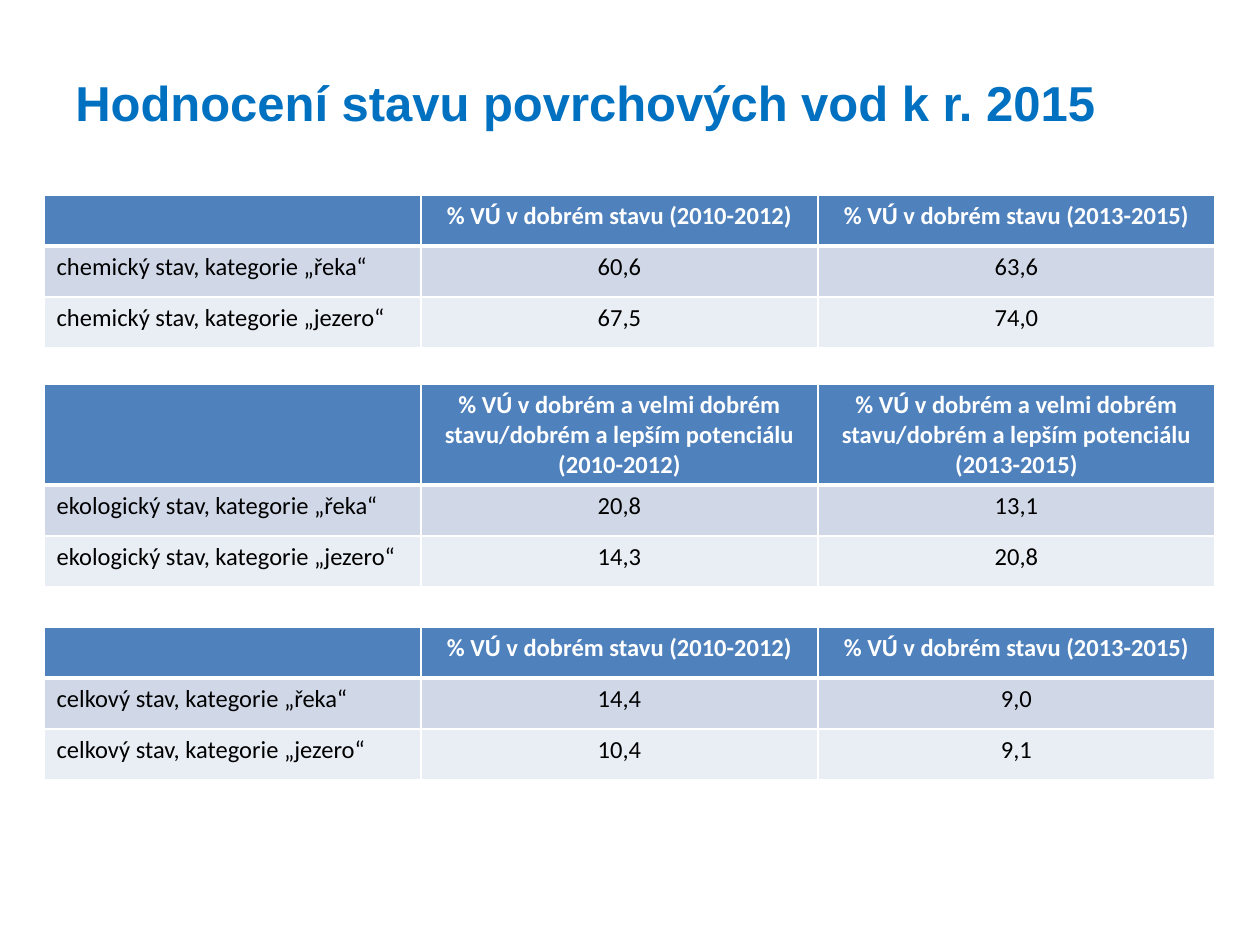
from lxml import etree
from pptx import Presentation
from pptx.dml.color import RGBColor
from pptx.enum.text import MSO_ANCHOR, PP_ALIGN
from pptx.oxml.ns import qn
from pptx.util import Emu, Pt

LEFT, CENTER = PP_ALIGN.LEFT, PP_ALIGN.CENTER
MIDDLE = MSO_ANCHOR.MIDDLE
EMU_PER_PX = 914400 / 126

THEME = {
    "title_font": "Arial", "title_size": 28, "title": "0070C0",
    "table_font": "Calibri", "table_size": 14,
    "header_text": "FFFFFF", "body_text": "000000", "border": "FFFFFF",
    "row_fills": ["4F81BD", "D0D8E8", "E9EDF4"],
}


def px(length):
    return Emu(round(length * EMU_PER_PX))


def write_text(frame, text, font, size, color, bold=False, align=LEFT):
    para = frame.paragraphs[0]
    para.alignment = align
    para.font.size = Pt(size)
    if text:
        span = para.add_run()
        span.text = text
        span.font.name = font
        span.font.size = Pt(size)
        span.font.bold = bold
        span.font.color.rgb = RGBColor.from_string(color)


deck = Presentation()
deck.slide_width, deck.slide_height = px(1260), px(945)
page = deck.slides.add_slide(deck.slide_layouts[6])

# Title
title_box = page.shapes.add_textbox(px(63), px(38), px(1134), px(127))
title_box.text_frame.word_wrap = True
title_box.text_frame.vertical_anchor = MIDDLE
write_text(title_box.text_frame, "Hodnocení stavu povrchových vod k r. 2015",
           font=THEME["title_font"], size=THEME["title_size"],
           color=THEME["title"], bold=True)

# Table contents: top, header height, header wording, body rows
GOOD_STATE = "% VÚ v dobrém stavu"
GOOD_POTENTIAL = "% VÚ v dobrém a velmi dobrém stavu/dobrém a lepším potenciálu"
PERIODS = ["(2010-2012)", "(2013-2015)"]
COLUMN_WIDTHS = [377, 397, 397]
ROW_HEIGHT = 51
TABLES = [
    (195, ROW_HEIGHT, GOOD_STATE, [
        ["chemický stav, kategorie „řeka“", "60,6", "63,6"],
        ["chemický stav, kategorie „jezero“", "67,5", "74,0"]]),
    (384, 101, GOOD_POTENTIAL, [
        ["ekologický stav, kategorie „řeka“", "20,8", "13,1"],
        ["ekologický stav, kategorie „jezero“", "14,3", "20,8"]]),
    (627, ROW_HEIGHT, GOOD_STATE, [
        ["celkový stav, kategorie „řeka“", "14,4", "9,0"],
        ["celkový stav, kategorie „jezero“", "10,4", "9,1"]]),
]

for top, header_height, measure, body in TABLES:
    rows = [[""] + [f"{measure} {period}" for period in PERIODS]] + body
    heights = [header_height] + [ROW_HEIGHT] * len(body)
    table = page.shapes.add_table(len(rows), len(COLUMN_WIDTHS), px(44), px(top),
                                  px(sum(COLUMN_WIDTHS)), px(sum(heights))).table
    for column, width in zip(table.columns, COLUMN_WIDTHS):
        column.width = px(width)

    for row_index, values in enumerate(rows):
        table.rows[row_index].height = px(heights[row_index])
        is_header = row_index == 0
        for column_index, value in enumerate(values):
            cell = table.cell(row_index, column_index)
            write_text(cell.text_frame, value,
                       font=THEME["table_font"], size=THEME["table_size"],
                       color=THEME["header_text" if is_header else "body_text"],
                       bold=is_header, align=CENTER if column_index else LEFT)

            # Borders, with a thick rule between header and body
            properties = cell._tc.get_or_add_tcPr()
            for side in ("lnL", "lnR", "lnT", "lnB"):
                thick = (row_index, side) in ((0, "lnB"), (1, "lnT"))
                line = etree.SubElement(properties, qn(f"a:{side}"),
                                        w=str(Pt(3 if thick else 1)))
                fill = etree.SubElement(line, qn("a:solidFill"))
                etree.SubElement(fill, qn("a:srgbClr"), val=THEME["border"])

            cell.fill.solid()
            cell.fill.fore_color.rgb = RGBColor.from_string(THEME["row_fills"][row_index])

deck.save("out.pptx")
